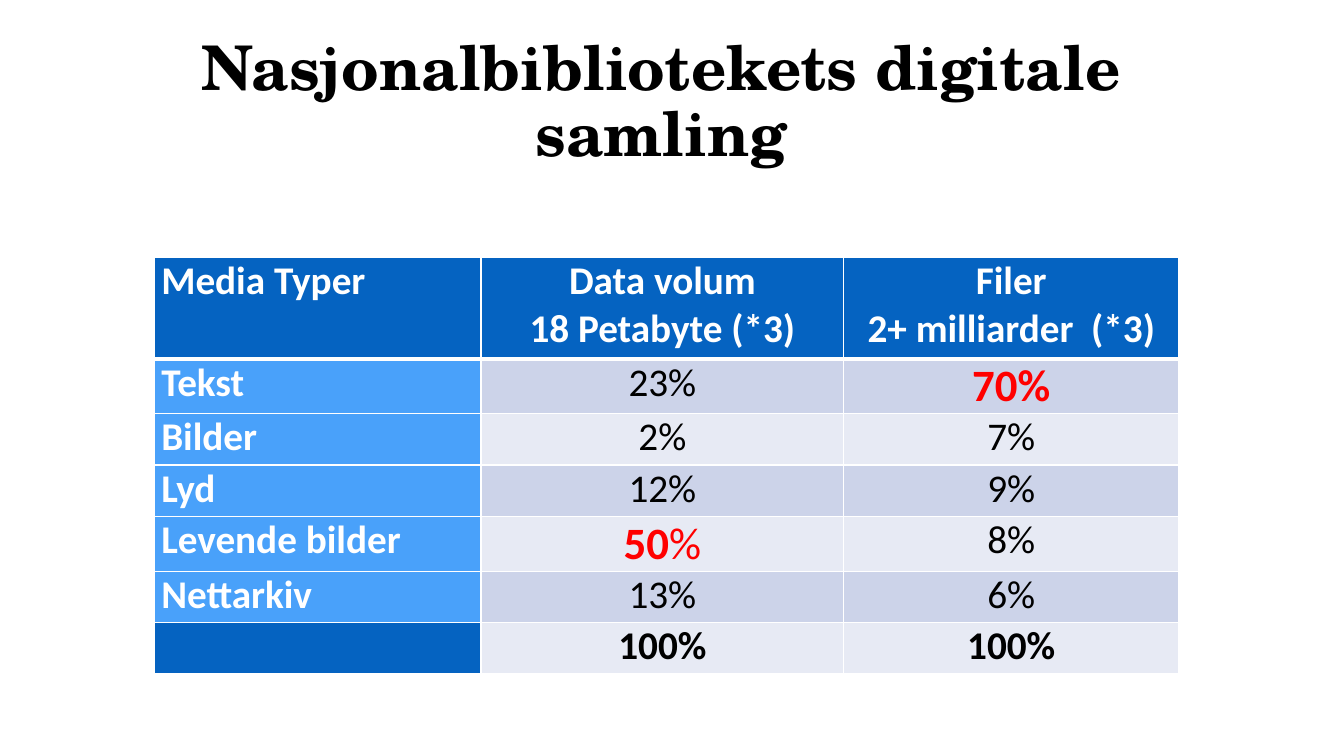
from dataclasses import dataclass

from pptx import Presentation
from pptx.dml.color import RGBColor
from pptx.enum.text import MSO_ANCHOR, MSO_AUTO_SIZE, PP_ALIGN
from pptx.oxml import parse_xml
from pptx.oxml.ns import nsdecls
from pptx.slide import Slide
from pptx.table import _Cell
from pptx.text.text import Font
from pptx.util import Inches, Pt


@dataclass(frozen=True)
class Face:
    size: int
    color: str
    bold: bool = False
    name: str = "Calibri"


@dataclass(frozen=True)
class Theme:
    title: Face = Face(44, "000000", True, "TeX Gyre Schola")
    label: Face = Face(28, "FFFFFF", True)
    value: Face = Face(28, "000000")
    total: Face = Face(28, "000000", True)
    peak: Face = Face(32, "FF0000", True)
    rest: Face = Face(32, "FF0000")
    head: str = "0563C1"
    side: str = "49A1FA"
    bands: tuple[str, str] = ("CCD3E9", "E7EAF4")
    rule: str = "FFFFFF"


@dataclass(frozen=True)
class Entry:
    text: str
    face: Face
    tail: str = ""


THEME = Theme()


def label(text: str) -> Entry:
    return Entry(text, THEME.label)


def value(text: str) -> Entry:
    return Entry(text, THEME.value)


ROWS = [
    [label("Media Typer"), label("Data volum\n18 Petabyte (*3)"),
     label("Filer\n2+ milliarder  (*3)")],
    [label("Tekst"), value("23%"), Entry("70%", THEME.peak)],
    [label("Bilder"), value("2%"), value("7%")],
    [label("Lyd"), value("12%"), value("9%")],
    [label("Levende bilder"), Entry("50", THEME.peak, "%"), value("8%")],
    [label("Nettarkiv"), value("13%"), value("6%")],
    [label(""), Entry("100%", THEME.total), Entry("100%", THEME.total)],
]
WIDTHS = [3.24, 3.6, 3.32]
HEAD, BODY = 1.01, 0.51


def style(font: Font, face: Face) -> None:
    font.name = face.name
    font.size = Pt(face.size)
    font.bold = face.bold
    font.color.rgb = RGBColor.from_string(face.color)


def border(cell: _Cell, row: int) -> None:
    widths = {"L": 1, "R": 1, "T": 3 if row == 1 else 1, "B": 3 if row == 0 else 1}
    for side, width in widths.items():
        cell._tc.get_or_add_tcPr().append(parse_xml(
            f'<a:ln{side} {nsdecls("a")} w="{Pt(width)}"><a:solidFill>'
            f'<a:srgbClr val="{THEME.rule}"/></a:solidFill></a:ln{side}>'))


def shade(row: int, col: int) -> str:
    if row == 0 or (col == 0 and row == len(ROWS) - 1):
        return THEME.head
    return THEME.side if col == 0 else THEME.bands[(row - 1) % 2]


def draw_cell(cell: _Cell, entry: Entry, row: int, col: int) -> None:
    border(cell, row)
    cell.fill.solid()
    cell.fill.fore_color.rgb = RGBColor.from_string(shade(row, col))
    cell.margin_left = cell.margin_right = Inches(0.07)
    cell.margin_top = cell.margin_bottom = 0
    frame = cell.text_frame
    frame.text = entry.text
    for para in frame.paragraphs:
        para.alignment = PP_ALIGN.CENTER if col else PP_ALIGN.LEFT
        for run in para.runs:
            style(run.font, entry.face)
    if entry.tail:
        run = frame.paragraphs[0].add_run()
        run.text = entry.tail
        style(run.font, THEME.rest)


def draw_table(slide: Slide) -> None:
    high = HEAD + BODY * (len(ROWS) - 1)
    table = slide.shapes.add_table(
        len(ROWS), len(WIDTHS), Inches(1.53), Inches(2.55),
        Inches(sum(WIDTHS)), Inches(high)).table
    table.first_row = table.horz_banding = False
    for col, width in enumerate(WIDTHS):
        table.columns[col].width = Inches(width)
    for row, line in enumerate(ROWS):
        table.rows[row].height = Inches(BODY if row else HEAD)
        for col, entry in enumerate(line):
            draw_cell(table.cell(row, col), entry, row, col)


def draw_title(slide: Slide, text: str) -> None:
    title = slide.shapes.title
    title.left, title.top = Inches(1.53), Inches(0.26)
    title.width, title.height = Inches(10.16), Inches(1.48)
    frame = title.text_frame
    frame.text = text
    frame.word_wrap = True
    frame.auto_size = MSO_AUTO_SIZE.NONE
    frame.vertical_anchor = MSO_ANCHOR.BOTTOM
    frame.margin_left, frame.margin_right = 0, Inches(0.1)
    frame.margin_top = frame.margin_bottom = Inches(0.05)
    para = frame.paragraphs[0]
    para.alignment = PP_ALIGN.CENTER
    para.line_spacing = 0.9
    style(para.runs[0].font, THEME.title)


def main() -> None:
    deck = Presentation()
    deck.slide_width, deck.slide_height = Inches(13.33), Inches(7.5)
    slide = deck.slides.add_slide(deck.slide_layouts[5])
    draw_title(slide, "Nasjonalbibliotekets digitale samling")
    draw_table(slide)
    deck.save("out.pptx")


if __name__ == "__main__":
    main()
